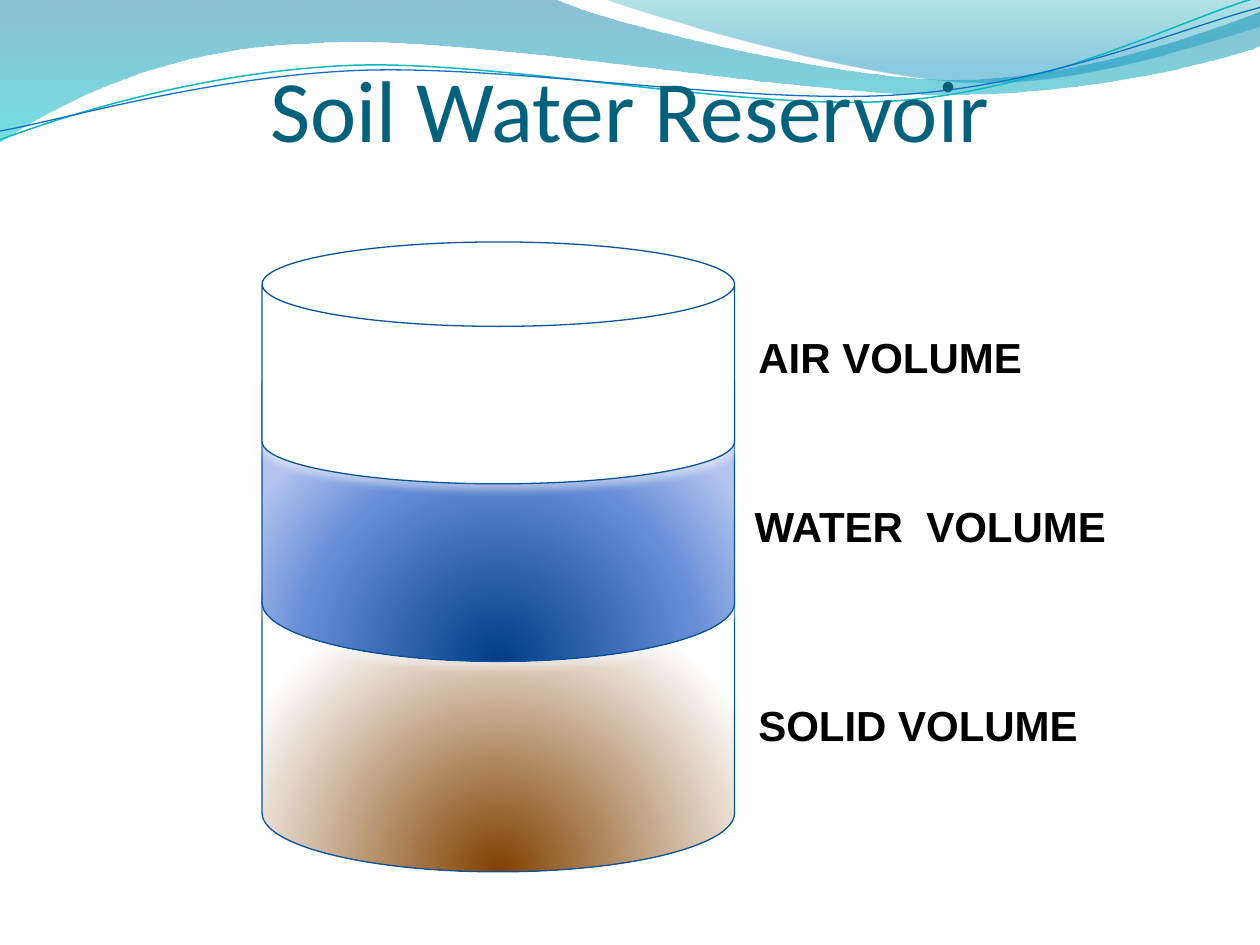
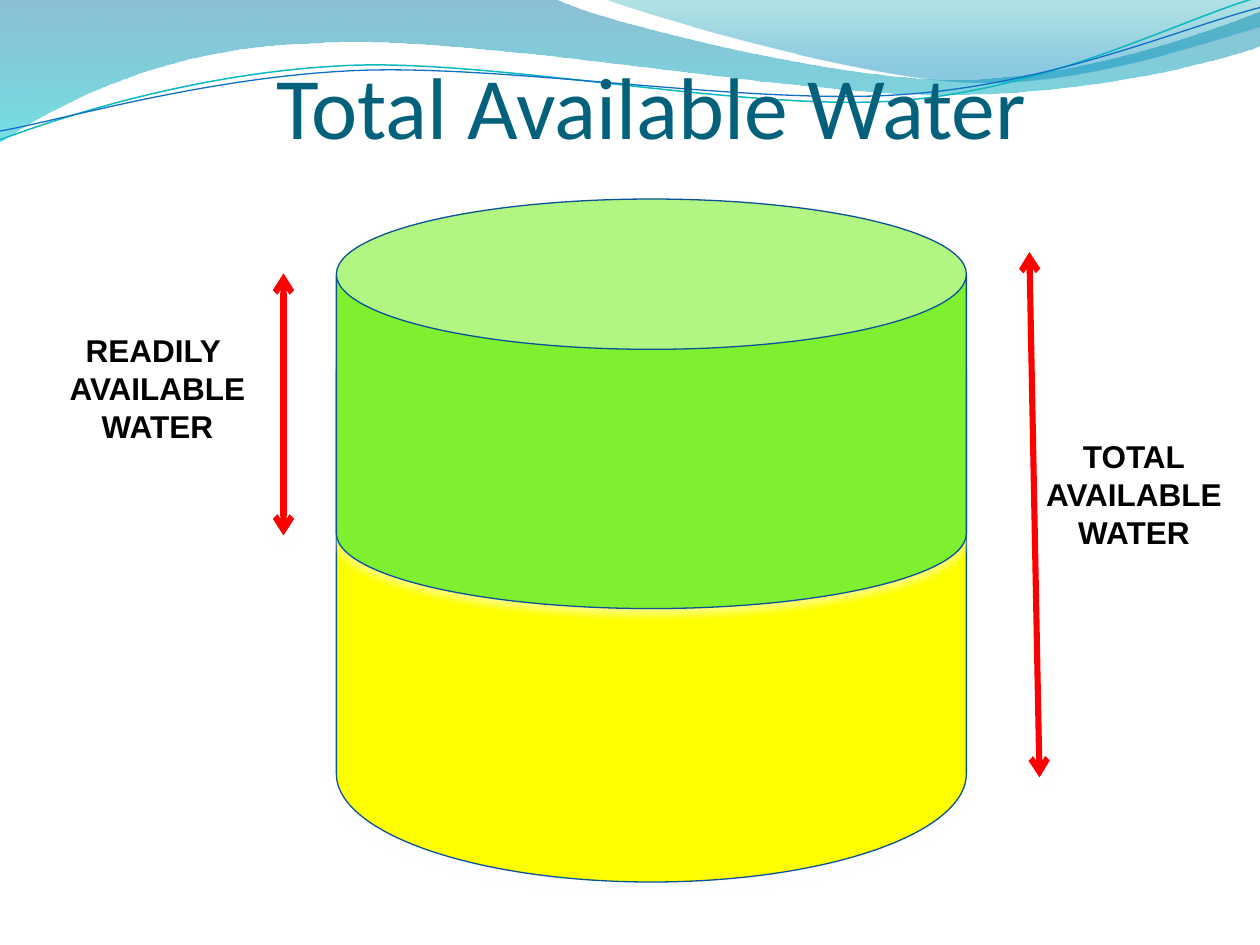
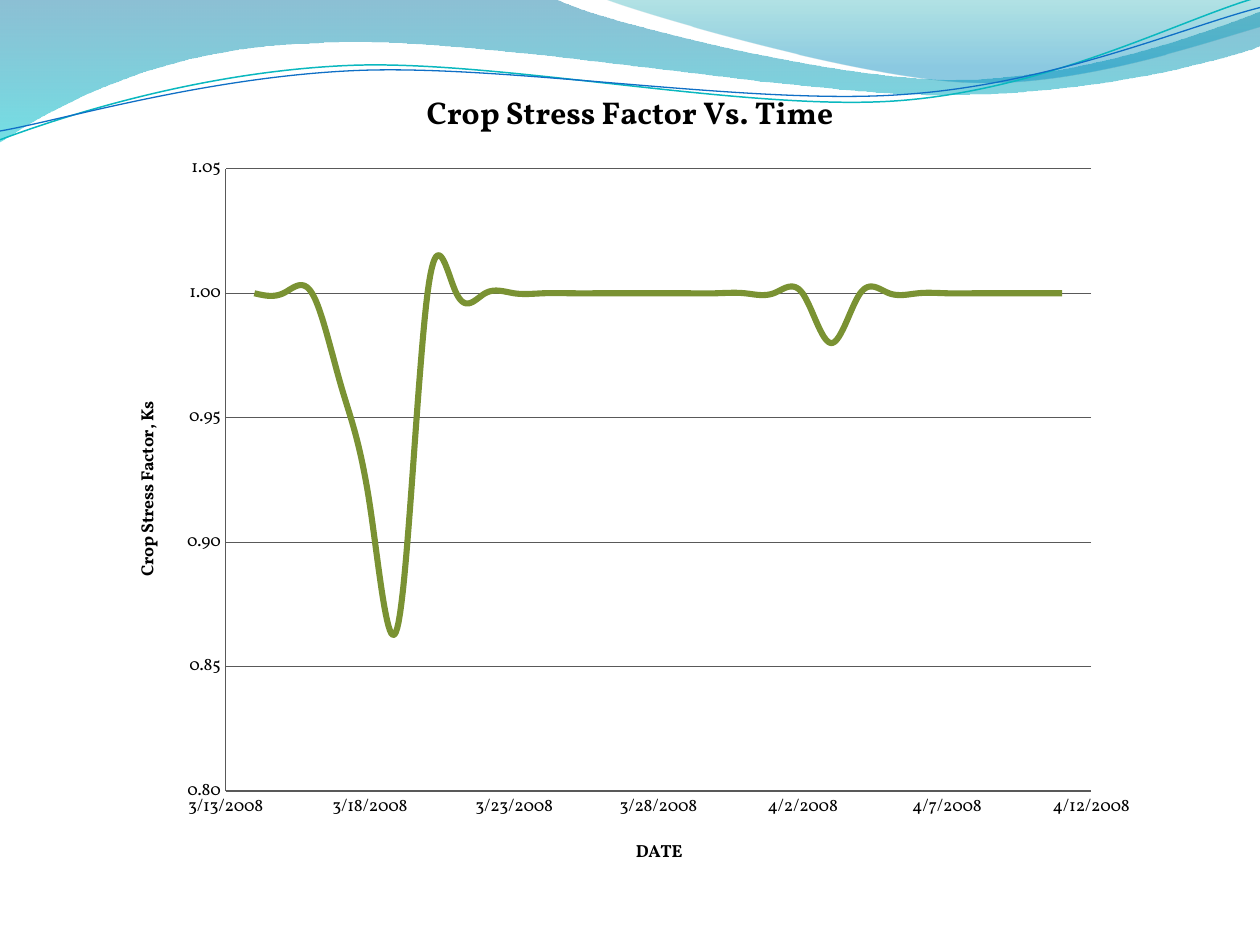
from dataclasses import dataclass
from pptx import Presentation
from pptx.chart.data import XyChartData
from pptx.dml.color import RGBColor
from pptx.enum.chart import XL_CHART_TYPE as ChartType, XL_TICK_LABEL_POSITION as LabelPosition, XL_TICK_MARK as TickMark
from pptx.enum.shapes import MSO_CONNECTOR as Connector, MSO_SHAPE as Preset
from pptx.enum.text import MSO_ANCHOR as Anchor, MSO_AUTO_SIZE as AutoSize, PP_ALIGN as Align
from pptx.oxml import parse_xml
from pptx.oxml.ns import nsdecls, qn
from pptx.util import Inches, Pt


@dataclass(frozen=True)
class Theme:
    """Colours, fonts and type sizes of the deck."""

    title: str = "04617B"
    text: str = "000000"
    outline: str = "095295"
    shadow: str = "FAFCFF"
    arrow: str = "FF0000"
    air: str = "FFFFFF"
    readily: str = "7EF030"
    reserve: str = "FFFF00"
    curve: str = "7A9233"
    axis: str = "595959"
    title_font: str = "Calibri"
    label_font: str = "Arial"
    chart_font: str = "Vollkorn"
    title_size: int = 50
    volume_size: int = 24
    water_size: int = 18
    chart_title_size: int = 18
    chart_size: int = 10


BAND_FILLS = [
    ([(0, 0), (4.4, -0.01), (4.76, 0.17, 6.64, 0.63, 7.58, 0.63),
      (8.53, 0.63, 9.58, 0.26, 10, 0.09), (10.01, 0.36),
      (9.83, 0.44, 8.7, 0.76, 7.46, 0.75), (6.22, 0.75, 3.82, 0.28, 2.57, 0.34),
      (1.29, 0.36, 0.46, 0.83, -0.01, 1.13)],
     [(0, "0074A1", 45), (100, "00C6CF", 55)]),
    ([(4.79, -0.01), (5.09, 0.11, 6.82, 0.62, 7.69, 0.65),
      (8.56, 0.69, 9.61, 0.32, 10, 0.21), (10, 0)],
     [(0, "00A1A9", 30), (80, "008BBF", 45)]),
]
BAND_LINES = [
    ([(0, 1.11), (0.48, 0.93, 1.58, 0.57, 2.77, 0.52),
      (3.95, 0.47, 5.93, 0.89, 7.13, 0.8), (8.33, 0.71, 9.38, 0.15, 9.98, -0.02)],
     "0AB8BF", 0.85),
    ([(0, 1.04), (0.47, 0.96, 1.64, 0.61, 2.83, 0.56),
      (4.03, 0.51, 5.97, 0.84, 7.17, 0.75), (8.36, 0.67, 9.41, 0.21, 10, 0.06)],
     "0F6FC6", 0.75),
]
SOLID_STOPS = [(0, "804000", 100), (100, "FFFFFF", 100)]
WATER_STOPS = [(0, "003D87", 100), (68, "668DD7", 100), (100, "B3C4EF", 100)]
DOWNWARD = '<a:lin ang="5400000" scaled="0"/>'
FROM_BASE = '<a:path path="circle"><a:fillToRect l="50000" t="130000" r="50000" b="-30000"/></a:path>'
CHART_BOX = (0.87, 0.42, 8.27, 6.66)
FIRST_DAY = 39521
STRESS = [1] * 3 + [0.963, 0.915, 0.868] + [1] * 14 + [0.98] + [1] * 8


def apply(target, **values):
    for name, value in values.items():
        setattr(target, name, value)


def set_layout(element, index, lengths):
    for layout in element.findall(qn("c:layout")):
        element.remove(layout)
    target = '<c:layoutTarget val="inner"/>' if len(lengths) == 4 else ""
    values = "".join(f'<c:{name} val="{length / size}"/>'
                     for name, length, size in zip("xywh", lengths, CHART_BOX[2:] * 2))
    element.insert(index, parse_xml(
        f'<c:layout {nsdecls("c")}><c:manualLayout>{target}<c:xMode val="edge"/><c:yMode val="edge"/>'
        f'{values}</c:manualLayout></c:layout>'))


class Deck:
    """Holds the theme and the current slide, and draws each kind of element."""

    def __init__(self, theme):
        self.theme = theme
        self.presentation = Presentation()
        apply(self.presentation, slide_width=Inches(10), slide_height=Inches(7.5))
        self.layout = self.presentation.slide_layouts[6]
        self.slide = None

    def add_slide(self):
        first = self.slide is None
        self.slide = self.presentation.slides.add_slide(self.layout)
        if first:
            self.add_bands()

    def add_bands(self):
        for path, stops in BAND_FILLS:
            shape = self.freeform(path, True)
            shape.line.fill.background()
            self.gradient(shape, stops, DOWNWARD)
        for path, color, width in BAND_LINES:
            shape = self.freeform(path, False)
            shape.fill.background()
            self.stroke(shape.line, color, width)
        for shape in list(self.slide.shapes):
            self.layout.shapes._spTree.append(shape._element)

    def freeform(self, path, close):
        points = [(Inches(segment[-2]), Inches(segment[-1])) for segment in path]
        builder = self.slide.shapes.build_freeform(*points[0], scale=1.0)
        builder.add_line_segments(points[1:], close=close)
        shape = builder.convert_to_shape()
        shape.shadow.inherit = False
        lines = shape._element.findall(".//" + qn("a:lnTo"))
        for line, segment in zip(lines, path[1:]):
            if len(segment) == 6:
                controls = "".join(
                    f'<a:pt x="{Inches(x) - shape.left}" y="{Inches(y) - shape.top}"/>'
                    for x, y in zip(segment[::2], segment[1::2]))
                line.getparent().replace(line, parse_xml(
                    f'<a:cubicBezTo {nsdecls("a")}>{controls}</a:cubicBezTo>'))
        return shape

    def gradient(self, shape, stops, direction):
        shape.fill.gradient()
        marks = "".join(
            f'<a:gs pos="{position * 1000}"><a:srgbClr val="{color}"><a:alpha val="{opacity * 1000}"/>'
            f'</a:srgbClr></a:gs>' for position, color, opacity in stops)
        properties = shape._element.spPr
        properties.replace(properties.find(qn("a:gradFill")), parse_xml(
            f'<a:gradFill {nsdecls("a")} rotWithShape="1"><a:gsLst>{marks}</a:gsLst>{direction}</a:gradFill>'))

    def stroke(self, line, color, width):
        line.color.rgb = RGBColor.from_string(color)
        line.width = Pt(width)

    def soft_shadow(self, shape):
        shape._element.spPr.append(parse_xml(
            f'<a:effectLst {nsdecls("a")}><a:outerShdw blurRad="{Pt(4.5)}" dist="{Pt(3)}" dir="5400000" '
            f'rotWithShape="0"><a:srgbClr val="{self.theme.shadow}"><a:alpha val="48000"/></a:srgbClr>'
            f'</a:outerShdw></a:effectLst>'))

    def font(self, font, name, size, color, bold=False):
        apply(font, name=name, size=Pt(size), bold=bold)
        font.color.rgb = RGBColor.from_string(color)

    def text(self, box, lines, style, align=Align.LEFT, **frame_values):
        frame = self.slide.shapes.add_textbox(*map(Inches, box)).text_frame
        apply(frame, **{"word_wrap": True, **frame_values})
        for index, line in enumerate(lines):
            paragraph = frame.add_paragraph() if index else frame.paragraphs[0]
            paragraph.alignment = align
            run = paragraph.add_run()
            run.text = line
            self.font(run.font, *style)

    def title(self, left, top, title):
        theme = self.theme
        self.text((left, top, 9, 1.25), [title], (theme.title_font, theme.title_size, theme.title), Align.CENTER,
                  vertical_anchor=Anchor.BOTTOM, margin_left=0, margin_right=0, margin_bottom=0)

    def label(self, box, lines, size, align=Align.LEFT, wrap=True):
        self.text(box, lines, (self.theme.label_font, size, self.theme.text, True), align,
                  word_wrap=wrap, auto_size=AutoSize.SHAPE_TO_FIT_TEXT)

    def can(self, box, fill, bend=0.349):
        shape = self.slide.shapes.add_shape(Preset.CAN, *map(Inches, box))
        shape.adjustments[0] = bend
        if isinstance(fill, str):
            shape.fill.solid()
            shape.fill.fore_color.rgb = RGBColor.from_string(fill)
        else:
            self.gradient(shape, fill, FROM_BASE)
        self.stroke(shape.line, self.theme.outline, 0.75)
        self.soft_shadow(shape)

    def double_arrow(self, *ends):
        connector = self.slide.shapes.add_connector(Connector.STRAIGHT, *map(Inches, ends))
        self.stroke(connector.line, self.theme.arrow, 3.5)
        line = connector._element.spPr.find(qn("a:ln"))
        for end in ("headEnd", "tailEnd"):
            line.append(parse_xml(f'<a:{end} {nsdecls("a")} type="arrow"/>'))
        self.soft_shadow(connector)

    def chart_title(self, title, text, size, place):
        title.text_frame.text = text
        run = title.text_frame.paragraphs[0].runs[0]
        self.font(run.font, self.theme.chart_font, size, self.theme.text, True)
        set_layout(title._element, 1, place)

    def scatter(self, title, x_title, y_title, points):
        theme = self.theme
        data = XyChartData()
        series = data.add_series("Series 1")
        for x, y in points:
            series.add_data_point(x, y)
        frame = self.slide.shapes.add_chart(
            ChartType.XY_SCATTER_SMOOTH_NO_MARKERS, *map(Inches, CHART_BOX), data)
        chart = frame.chart
        apply(chart, has_legend=False, has_title=True)
        self.font(chart.font, theme.chart_font, theme.chart_size, theme.text)
        self.chart_title(chart.chart_title, title, theme.chart_title_size, (2.47, 0.25))
        axes = [
            (chart.category_axis, x_title, (4.15, 6.22), "m/d/yyyy",
             dict(minimum_scale=39520, maximum_scale=39550, major_unit=5, has_major_gridlines=False)),
            (chart.value_axis, y_title, (0.18, 2.74), "0.00",
             dict(minimum_scale=0.8, maximum_scale=1.05, major_unit=0.05, has_major_gridlines=True)),
        ]
        for axis, text, place, number_format, values in axes:
            apply(axis, major_tick_mark=TickMark.NONE, minor_tick_mark=TickMark.NONE,
                  tick_label_position=LabelPosition.NEXT_TO_AXIS, **values)
            apply(axis.tick_labels, number_format=number_format, number_format_is_linked=False)
            self.stroke(axis.format.line, theme.axis, 0.75)
            self.chart_title(axis.axis_title, text, theme.chart_size, place)
        value_axis = chart.value_axis
        self.stroke(value_axis.major_gridlines.format.line, theme.axis, 0.75)
        value_axis.axis_title._element.find(".//" + qn("a:bodyPr")).set("rot", "-5400000")
        plot = chart.plots[0]
        plot.vary_by_categories = False
        curve = plot.series[0]
        self.stroke(curve.format.line, theme.curve, 3.5)
        curve._element.find(qn("c:smooth")).set("val", "1")
        set_layout(chart._chartSpace.find(".//" + qn("c:plotArea")), 0, (0.92, 0.92, 6.87, 4.94))


def main():
    theme = Theme()
    deck = Deck(theme)

    deck.add_slide()
    deck.title(0.5, 0.02, "Soil Water Reservoir")
    for top, height, fill in [(4.25, 2.67, SOLID_STOPS), (2.58, 2.67, WATER_STOPS), (1.92, 1.92, theme.air)]:
        deck.can((2.08, top, 3.75, height), fill)
    for left, top, width, name in [(5.92, 2.58, 2.31, "AIR VOLUME"), (5.89, 3.92, 3.02, "WATER  VOLUME"),
                                   (5.92, 5.5, 2.76, "SOLID VOLUME")]:
        deck.label((left, top, width, 0.5), [name], theme.volume_size, wrap=False)

    deck.add_slide()
    deck.title(0.67, 0, "Total Available Water")
    deck.can((2.67, 2.08, 5, 4.92), theme.reserve)
    deck.can((2.67, 1.58, 5, 3.25), theme.readily, 0.367)
    for left, top, first_line in [(0, 2.58, "READILY "), (7.75, 3.42, "TOTAL")]:
        deck.label((left, top, 2.5, 1.01), [first_line, "AVAILABLE", "WATER"], theme.water_size, Align.CENTER)
    deck.double_arrow(8.17, 2, 8.25, 6.17)
    deck.double_arrow(2.25, 2.17, 2.25, 4.25)

    deck.add_slide()
    deck.scatter("Crop Stress Factor Vs. Time", "DATE", "Crop Stress Factor, Ks", enumerate(STRESS, FIRST_DAY))
    deck.presentation.save("out.pptx")


if __name__ == "__main__":
    main()
